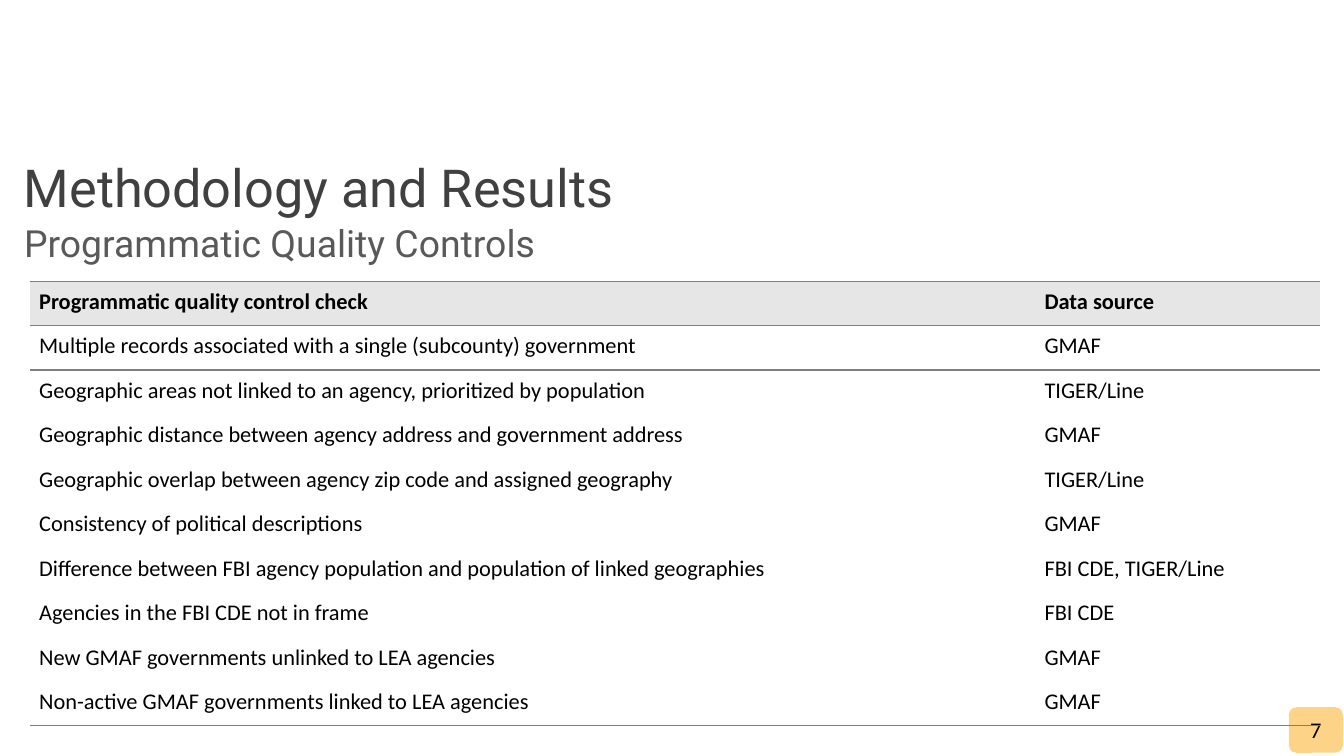
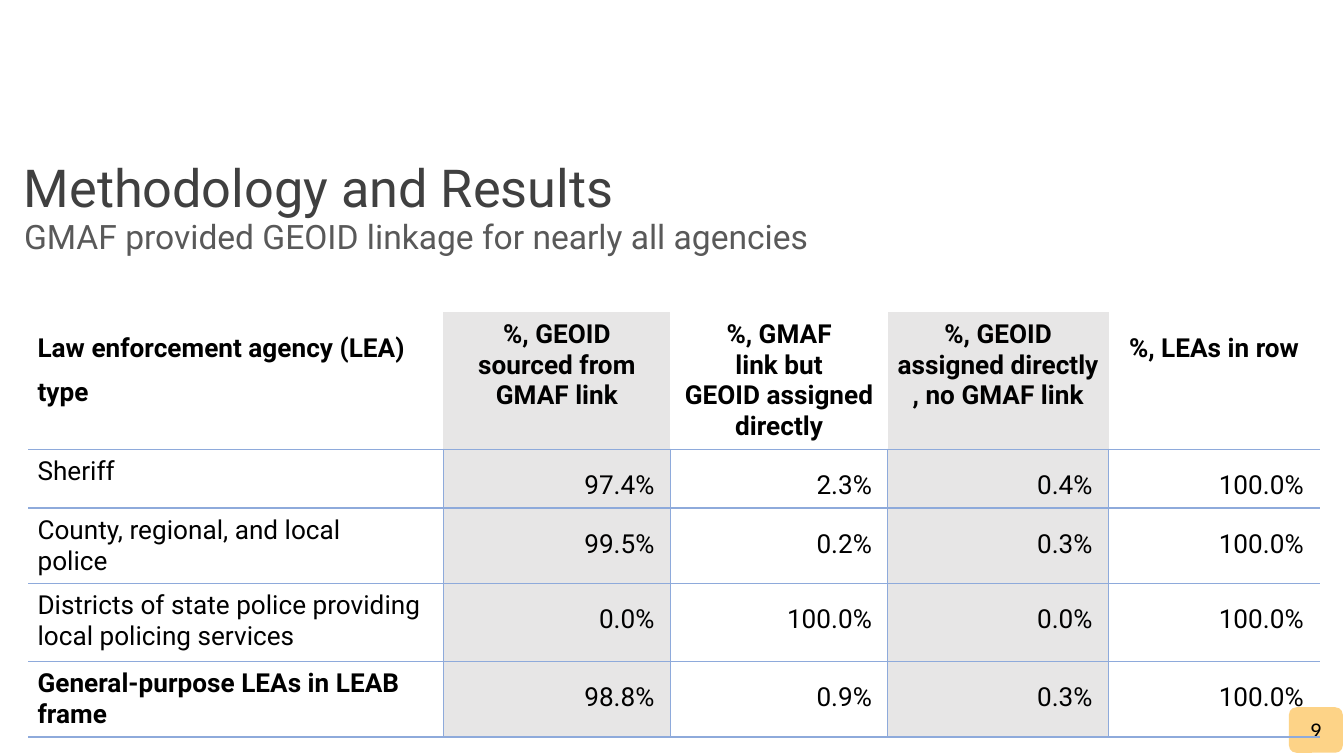
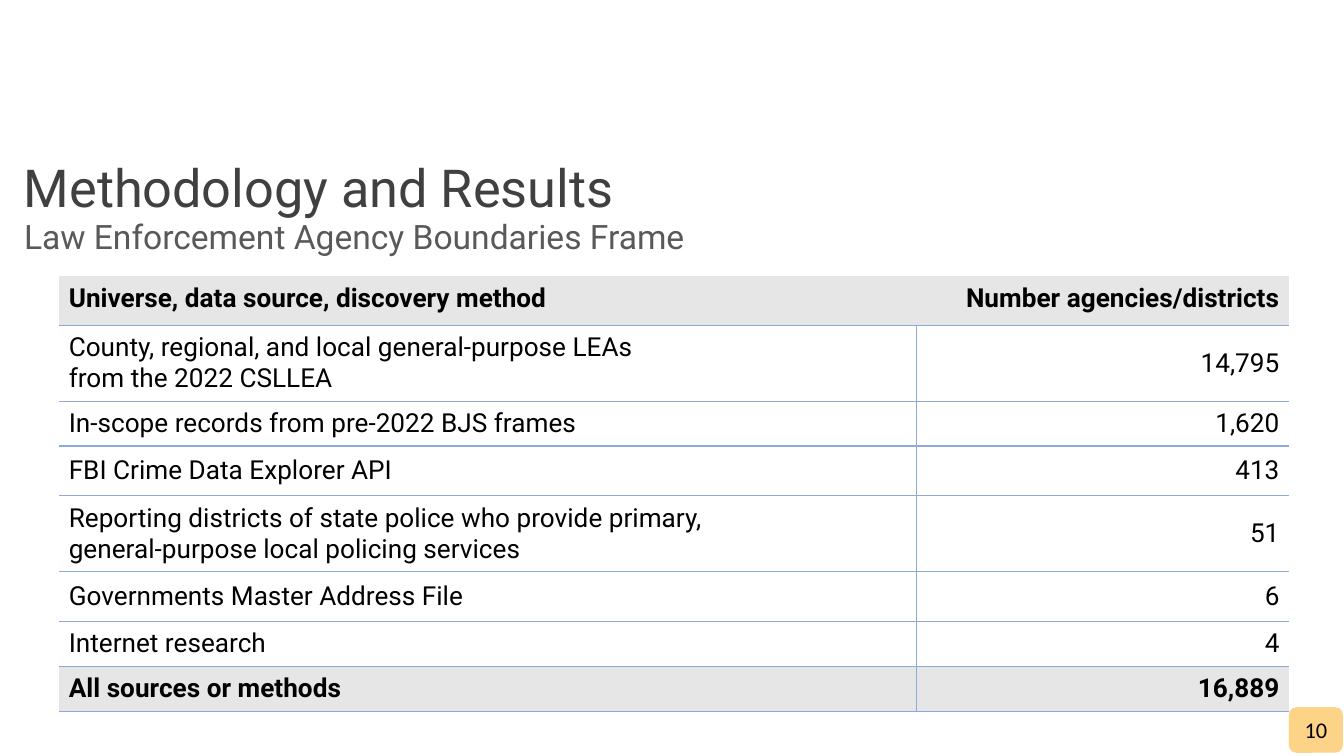
import pptx
import pptx.dml.color
import pptx.enum.shapes
import pptx.enum.text
import pptx.oxml
import pptx.oxml.ns
import pptx.util

Cm = pptx.util.Cm
Pt = pptx.util.Pt
ALIGN = pptx.enum.text.PP_ALIGN
ANCHOR = pptx.enum.text.MSO_ANCHOR
NO_GRID_STYLE = "{2D5ABB26-0587-4C30-8999-92F81FD0307C}"


def rgb(value):
    return pptx.dml.color.RGBColor.from_string(value)


class Deck:
    heading_color = "404040"
    title_color = "595959"
    text_color = "000000"
    shade = "E7E6E6"
    badge_fill = "FDD387"
    heading_font = "Roboto"
    badge_font = "Calibri"

    def __init__(self):
        self.prs = pptx.Presentation()
        self.prs.slide_width = Cm(25.4)
        self.prs.slide_height = Cm(14.28)
        self.s = None

    def slide(self, title, number, top=3.58, height=1.85, size=18):
        self.s = self.prs.slides.add_slide(self.prs.slide_layouts[5])
        self.heading("Methodology and Results")
        self.title(title, top, height, size)
        self.badge(number)

    def font(self, p, name, size, color, bold=False):
        p.font.name = name
        p.font.size = Pt(size)
        p.font.bold = bold
        p.font.color.rgb = rgb(color)

    def line_of_text(self, sp, text, size, color):
        tf = sp.text_frame
        tf.text = text
        tf.word_wrap = True
        tf.auto_size = pptx.enum.text.MSO_AUTO_SIZE.NONE
        tf.vertical_anchor = ANCHOR.MIDDLE
        p = tf.paragraphs[0]
        p.alignment = ALIGN.LEFT
        p.line_spacing = 0.9
        self.font(p, self.heading_font, size, color)

    def heading(self, text):
        sp = self.s.shapes.add_textbox(Cm(0.2), Cm(2.21), Cm(23.7), Cm(2.77))
        self.line_of_text(sp, text, 28, self.heading_color)

    def title(self, text, top, height, size):
        sp = self.s.shapes.title
        sp.left, sp.top, sp.width, sp.height = Cm(0.2), Cm(top), Cm(23.7), Cm(height)
        self.line_of_text(sp, text, size, self.title_color)

    def badge(self, number):
        sp = self.s.shapes.add_shape(
            pptx.enum.shapes.MSO_SHAPE.ROUNDED_RECTANGLE,
            Cm(24.36), Cm(13.36), Cm(1.02), Cm(0.86))
        sp.shadow.inherit = False
        sp.fill.solid()
        sp.fill.fore_color.rgb = rgb(self.badge_fill)
        sp.line.fill.background()
        tf = sp.text_frame
        tf.text = str(number)
        tf.vertical_anchor = ANCHOR.MIDDLE
        p = tf.paragraphs[0]
        p.alignment = ALIGN.CENTER
        self.font(p, self.badge_font, 12, self.text_color)

    def borders(self, cell, edges, color):
        tcPr = cell._tc.get_or_add_tcPr()
        for edge in edges:
            tcPr.append(pptx.oxml.parse_xml(
                f'<a:ln{edge} {pptx.oxml.ns.nsdecls("a")} w="9525"><a:solidFill>'
                f'<a:srgbClr val="{color}"/></a:solidFill></a:ln{edge}>'))

    def table(self, left, top, widths, heights, rows, edges, line, shaded, bold,
              align, font="Roboto", size=14, spaced=None, middle=None, right=0.18):
        t = self.s.shapes.add_table(
            len(rows), len(widths), Cm(left), Cm(top),
            Cm(sum(widths)), Cm(sum(heights))).table
        t._tbl.tblPr[0].text = NO_GRID_STYLE
        t.first_row = t.horz_banding = False
        for column, width in zip(t.columns, widths):
            column.width = Cm(width)
        for row, height in zip(t.rows, heights):
            row.height = Cm(height)
        for r, row in enumerate(rows):
            for c, text in enumerate(row):
                cell = t.cell(r, c)
                cell.margin_left = Cm(0.18)
                cell.margin_right = Cm(right if align(r, c) == ALIGN.RIGHT else 0.18)
                cell.margin_top = cell.margin_bottom = Cm(0.13)
                if middle and middle(r, c):
                    cell.vertical_anchor = ANCHOR.MIDDLE
                self.borders(cell, edges(r, c, len(rows), len(widths)), line)
                if shaded(r, c):
                    cell.fill.solid()
                    cell.fill.fore_color.rgb = rgb(self.shade)
                else:
                    cell.fill.background()
                cell.text_frame.text = text
                for p in cell.text_frame.paragraphs:
                    p.alignment = align(r, c)
                    if spaced and spaced(r, c):
                        p.line_spacing = Pt(24)
                    self.font(p, font, size, self.text_color, bold(r, c))


def ruled_edges(r, c, row_count, column_count):
    return ("T" if r < 2 else "") + ("B" if r in (0, row_count - 1) else "")


def grid_edges(r, c, row_count, column_count):
    if r == 0:
        return "B"
    return ("L" if c else "") + ("R" if c < column_count - 1 else "") + "TB"


def quality_controls(deck):
    deck.slide("Programmatic Quality Controls", 7, top=3.25, height=2.77, size=20)
    rows = [
        ("Programmatic quality control check", "Data source"),
        ("Multiple records associated with a single (subcounty) government", "GMAF"),
        ("Geographic areas not linked to an agency, prioritized by population", "TIGER/Line"),
        ("Geographic distance between agency address and government address", "GMAF"),
        ("Geographic overlap between agency zip code and assigned geography", "TIGER/Line"),
        ("Consistency of political descriptions", "GMAF"),
        ("Difference between FBI agency population and population of linked geographies",
         "FBI CDE, TIGER/Line"),
        ("Agencies in the FBI CDE not in frame", "FBI CDE"),
        ("New GMAF governments unlinked to LEA agencies", "GMAF"),
        ("Non-active GMAF governments linked to LEA agencies", "GMAF"),
    ]
    deck.table(
        0.56, 5.31, [19, 5.38], [0.84] * len(rows), rows, ruled_edges, "7F7F7F",
        shaded=lambda r, c: r == 0,
        bold=lambda r, c: r == 0,
        align=lambda r, c: ALIGN.LEFT,
        font="Calibri", size=12)


def geoid_linkage(deck):
    deck.slide("GMAF provided GEOID linkage for nearly all agencies", 9)
    rows = [
        ("Law enforcement agency (LEA) type",
         "%, GEOID\nsourced from\nGMAF link",
         "%, GMAF\vlink but\vGEOID assigned\ndirectly",
         "%, GEOID\nassigned directly\v, no GMAF link",
         "%, LEAs in row"),
        ("Sheriff", "97.4%", "2.3%", "0.4%", "100.0%"),
        ("County, regional, and local\vpolice", "99.5%", "0.2%", "0.3%", "100.0%"),
        ("Districts of state police providing local policing services",
         "0.0%", "100.0%", "0.0%", "100.0%"),
        ("General-purpose LEAs in LEAB frame", "98.8%", "0.9%", "0.3%", "100.0%"),
    ]

    def align(r, c):
        if c == 0:
            return ALIGN.LEFT
        return ALIGN.RIGHT if r else ALIGN.CENTER

    deck.table(
        0.53, 5.89, [7.85, 4.29, 4.11, 4.17, 3.99], [2.08, 1.09, 1.09, 1.47, 1.42],
        rows, grid_edges, "8EAADB",
        shaded=lambda r, c: c in (1, 3),
        bold=lambda r, c: r == 0 or (r == len(rows) - 1 and c == 0),
        align=align,
        spaced=lambda r, c: c > 0 if r else c in (0, 4),
        right=0.3)


def boundaries_frame(deck):
    deck.slide("Law Enforcement Agency Boundaries Frame", 10)
    rows = [
        ("Universe, data source, discovery method", "Number agencies/districts"),
        ("County, regional, and local general-purpose LEAs\nfrom the 2022 CSLLEA", "14,795"),
        ("In-scope records from pre-2022 BJS frames", "1,620"),
        ("FBI Crime Data Explorer API", "413"),
        ("Reporting districts of state police who provide primary,\n"
         "general-purpose local policing services", "51"),
        ("Governments Master Address File", "6"),
        ("Internet research", "4"),
        ("All sources or methods", "16,889"),
    ]

    def outer_row(r, c):
        return r in (0, len(rows) - 1)

    deck.table(
        1.12, 5.21, [16.2, 7.04], [0.94, 1.37, 0.84, 0.94, 1.37, 0.94, 0.86, 0.81],
        rows, grid_edges, "8EAADB",
        shaded=outer_row,
        bold=outer_row,
        align=lambda r, c: ALIGN.RIGHT if c else ALIGN.LEFT,
        middle=lambda r, c: not outer_row(r, c))


def main():
    deck = Deck()
    quality_controls(deck)
    geoid_linkage(deck)
    boundaries_frame(deck)
    deck.prs.save("out.pptx")


if __name__ == "__main__":
    main()
